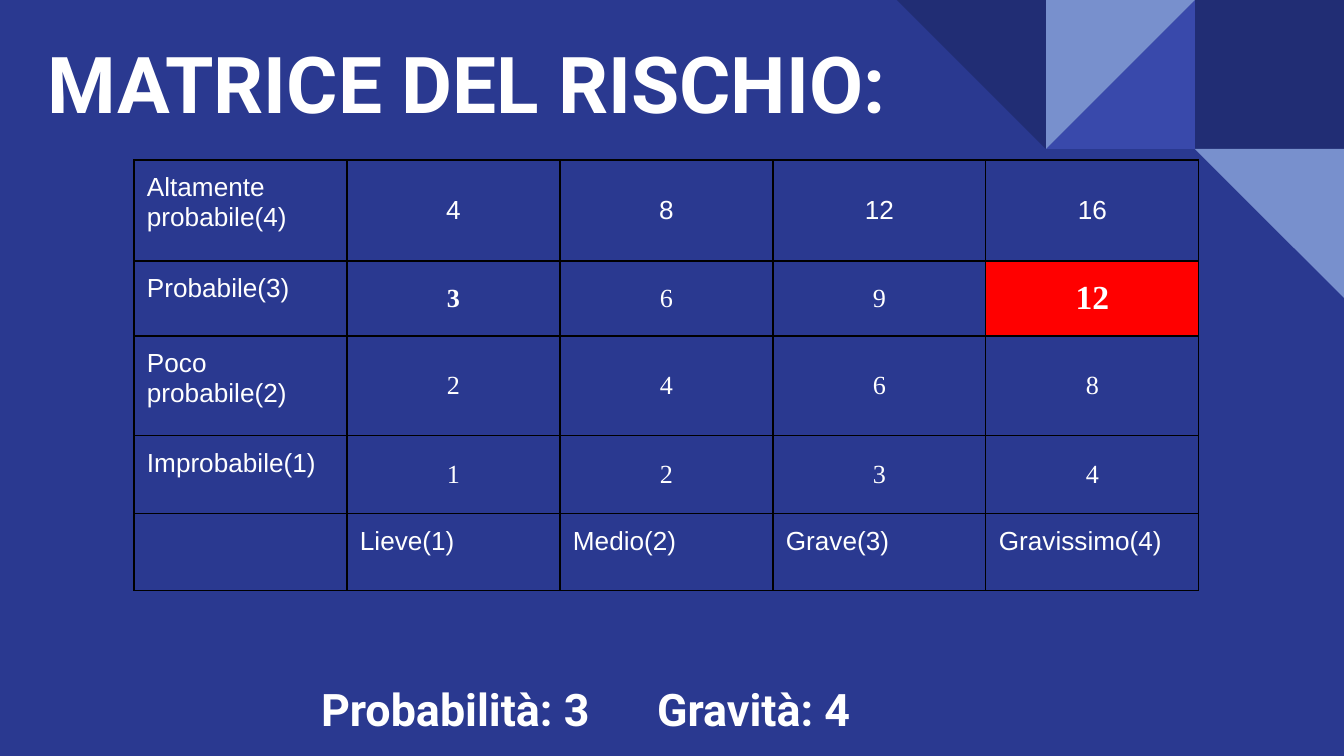
import pptx
import pptx.dml.color
import pptx.enum.shapes
import pptx.enum.text
import pptx.oxml
import pptx.oxml.ns
import pptx.util

RGBColor = pptx.dml.color.RGBColor
Shape = pptx.enum.shapes.MSO_SHAPE
Anchor = pptx.enum.text.MSO_ANCHOR
Align = pptx.enum.text.PP_ALIGN

BLUE = RGBColor(0x2A, 0x39, 0x90)
NAVY = RGBColor(0x21, 0x2D, 0x74)
INDIGO = RGBColor(0x39, 0x49, 0xAB)
SKY = RGBColor(0x78, 0x90, 0xCD)
RED = RGBColor(0xFF, 0x00, 0x00)
WHITE = RGBColor(0xFF, 0xFF, 0xFF)
BLACK = RGBColor(0x00, 0x00, 0x00)

PX_PER_INCH = 134.4
INSET = 13
TILE = 149


def px(length):
    return pptx.util.Inches(length / PX_PER_INCH)


def write(para, text, font="Arial", size=14, bold=False, color=WHITE, align=Align.LEFT):
    para.alignment = align
    para.font.size = pptx.util.Pt(size)
    if text:
        span = para.add_run()
        span.text = text
        span.font.name = font
        span.font.size = pptx.util.Pt(size)
        span.font.bold = bold
        span.font.color.rgb = color


def add_tab_stop(para, position):
    properties = para._p.get_or_add_pPr()
    properties.append(pptx.oxml.parse_xml(
        f'<a:tabLst {pptx.oxml.ns.nsdecls("a")}>'
        f'<a:tab pos="{px(position)}" algn="l"/></a:tabLst>'))


def add_borders(cell, color=BLACK, points=0.75):
    properties = cell._tc.get_or_add_tcPr()
    for side in "LRTB":
        properties.append(pptx.oxml.parse_xml(
            f'<a:ln{side} {pptx.oxml.ns.nsdecls("a")} w="{pptx.util.Pt(points)}">'
            f'<a:solidFill><a:srgbClr val="{color}"/></a:solidFill></a:ln{side}>'))


class Painter:
    """Holds the heading style and the current slide."""

    heading = {"font": "Roboto", "bold": True}

    def __init__(self, page):
        self.page = page

    def background(self, color):
        fill = self.page.background.fill
        fill.solid()
        fill.fore_color.rgb = color

    def tile(self, kind, left, top, color, rotation=0):
        shape = self.page.shapes.add_shape(kind, px(left), px(top), px(TILE), px(TILE))
        shape.shadow.inherit = False
        shape.fill.solid()
        shape.fill.fore_color.rgb = color
        shape.line.fill.background()
        shape.rotation = rotation

    def text(self, text, left, top, width, height, size, anchor=Anchor.TOP, tab=None):
        box = self.page.shapes.add_textbox(px(left), px(top), px(width), px(height))
        frame = box.text_frame
        frame.word_wrap = True
        frame.vertical_anchor = anchor
        frame.margin_left = frame.margin_right = px(INSET)
        frame.margin_top = frame.margin_bottom = px(INSET)
        para = frame.paragraphs[0]
        if tab:
            add_tab_stop(para, tab)
        write(para, text, size=size, **self.heading)

    def table(self, rows, left, top, column_width, row_heights, formats):
        """formats maps (row, column) to keyword arguments of write and a cell fill."""
        columns = len(rows[0])
        table = self.page.shapes.add_table(
            len(rows), columns, px(left), px(top),
            px(column_width * columns), px(sum(row_heights))).table
        table.first_row = table.horz_banding = False
        for column in table.columns:
            column.width = px(column_width)
        for r, (texts, height) in enumerate(zip(rows, row_heights)):
            table.rows[r].height = px(height)
            for c, text in enumerate(texts):
                self.cell(table.cell(r, c), text, **formats.get((r, c), {}))

    def cell(self, cell, text, fill=None, **style):
        cell.margin_left = cell.margin_right = px(INSET)
        cell.margin_top = cell.margin_bottom = px(INSET)
        if style.get("align") == Align.CENTER:
            cell.vertical_anchor = Anchor.MIDDLE
        add_borders(cell)
        if fill is None:
            cell.fill.background()
        else:
            cell.fill.solid()
            cell.fill.fore_color.rgb = fill
        write(cell.text_frame.paragraphs[0], text, **style)


def risk_matrix():
    """Return the table texts and the formats of the score cells."""
    likelihoods = ["Altamente probabile(4)", "Probabile(3)",
                   "Poco probabile(2)", "Improbabile(1)"]
    severities = ["Lieve(1)", "Medio(2)", "Grave(3)", "Gravissimo(4)"]
    rows, formats = [], {}
    for r, label in enumerate(likelihoods):
        rows.append([label] + [str((4 - r) * severity) for severity in range(1, 5)])
        for c in range(1, 5):
            formats[r, c] = {"align": Align.CENTER,
                             "font": "Times New Roman" if r else "Arial"}
    rows.append([""] + severities)
    formats[1, 1].update(bold=True)
    formats[1, 4].update(bold=True, size=18, fill=RED)
    return rows, formats


def main():
    deck = pptx.Presentation()
    deck.slide_width, deck.slide_height = px(1344), px(756)
    painter = Painter(deck.slides.add_slide(deck.slide_layouts[6]))
    painter.background(BLUE)

    right = 1344 - TILE
    middle = right - TILE
    painter.tile(Shape.RECTANGLE, right, 0, NAVY)
    painter.tile(Shape.RIGHT_TRIANGLE, middle, 0, INDIGO, rotation=270)
    painter.tile(Shape.RIGHT_TRIANGLE, middle, 0, SKY, rotation=90)
    painter.tile(Shape.RIGHT_TRIANGLE, middle - TILE, 0, NAVY, rotation=180)
    painter.tile(Shape.RIGHT_TRIANGLE, right, TILE, SKY, rotation=180)

    painter.text("MATRICE DEL RISCHIO:", 35, 20, 984, 124, 42, anchor=Anchor.MIDDLE)
    painter.text("Probabilità: 3\tGravità: 4", 308, 669, 1036, 82, 24, tab=336)

    rows, formats = risk_matrix()
    painter.table(rows, 134, 160, 213, [101, 75, 100, 78, 77], formats)

    deck.save("out.pptx")


if __name__ == "__main__":
    main()
